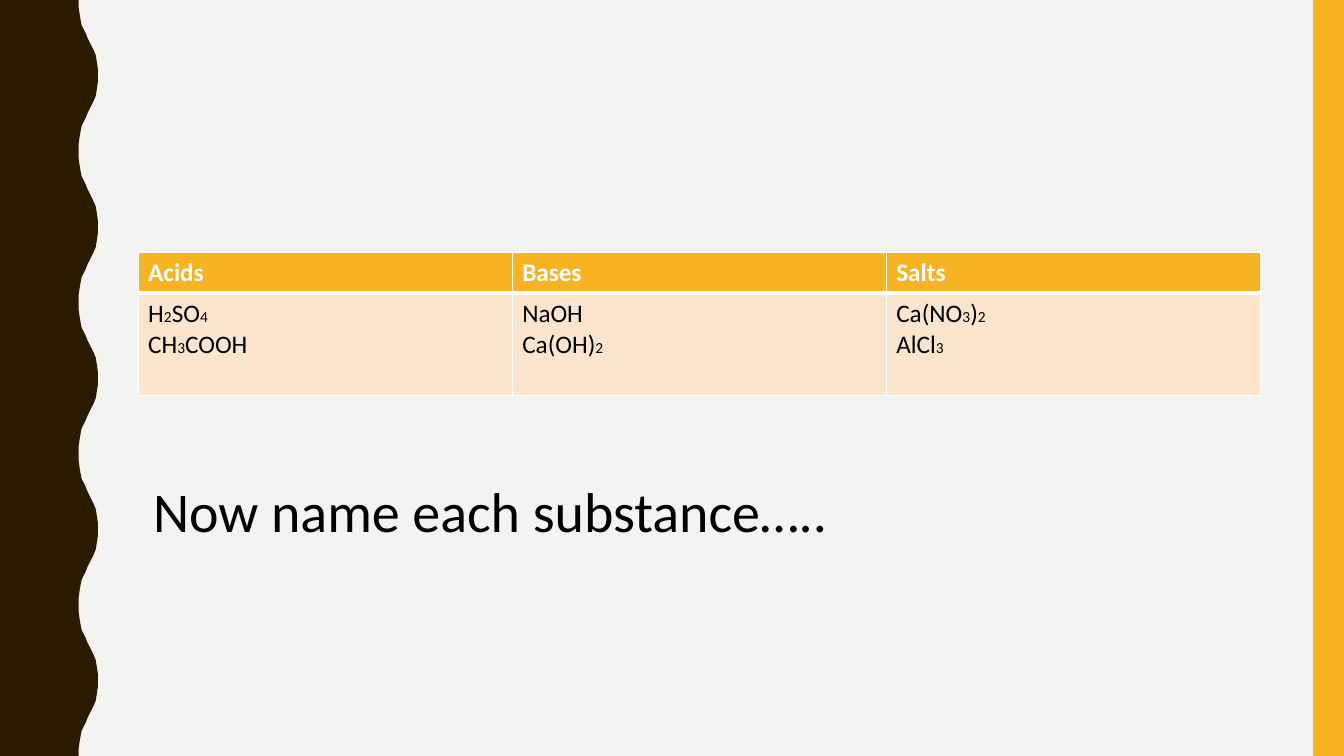
from itertools import groupby

from lxml.etree import SubElement
from pptx import Presentation
from pptx.dml.color import RGBColor
from pptx.enum.shapes import MSO_SHAPE
from pptx.enum.text import MSO_AUTO_SIZE
from pptx.oxml.ns import qn
from pptx.util import Emu, Pt

SCALE = 9144
SLIDE_WIDTH, SLIDE_HEIGHT = 1333, 750

BACKGROUND = RGBColor(0xF3, 0xF3, 0xF2)
BROWN = RGBColor(0x2A, 0x1A, 0x00)
AMBER = RGBColor(0xF8, 0xB3, 0x23)
PEACH = RGBColor(0xFC, 0xE5, 0xCD)
WHITE = RGBColor(0xFF, 0xFF, 0xFF)
BLACK = RGBColor(0x00, 0x00, 0x00)

HEADING = {"name": "Calibri", "size": Pt(18), "bold": True}
BODY = {"name": "Calibri", "size": Pt(18), "bold": False}
SUBSCRIPT = {"name": "Calibri", "size": Pt(11), "bold": False}
PROMPT = {"name": "Calibri", "size": Pt(40), "bold": False}

WAVE_PERIOD = 150
WAVE_RISE = [
    (78, 0), (78, 7), (79, 14), (80, 20), (81, 25), (83, 29), (85, 33), (87, 38),
    (89, 42), (91, 46), (93, 50), (95, 55), (96, 61), (97, 68), (97, 75),
]

SUBSTANCES = {
    "Acids": ["H2SO4", "CH3COOH"],
    "Bases": ["NaOH", "Ca(OH)2"],
    "Salts": ["Ca(NO3)2", "AlCl3"],
}
HEADER_HEIGHT = 41


def px(length):
    return Emu(length * SCALE)


def paint(shape, color):
    shape.shadow.inherit = False
    shape.fill.solid()
    shape.fill.fore_color.rgb = color
    shape.line.fill.background()


def add_run(paragraph, text, text_format, color):
    run = paragraph.add_run()
    run.text = text
    for name, value in text_format.items():
        setattr(run.font, name, value)
    run.font.color.rgb = color


def add_formula(paragraph, formula):
    for is_digit, characters in groupby(formula, str.isdigit):
        add_run(paragraph, "".join(characters), SUBSCRIPT if is_digit else BODY, BLACK)


def style_cell(cell, color, top_width, bottom_width):
    properties = cell._tc.get_or_add_tcPr()
    widths = {"a:lnL": 1, "a:lnR": 1, "a:lnT": top_width, "a:lnB": bottom_width}
    for tag, width in widths.items():
        border = SubElement(properties, qn(tag), w=str(Pt(width)))
        fill = SubElement(border, qn("a:solidFill"))
        SubElement(fill, qn("a:srgbClr"), val=str(WHITE))
    cell.fill.solid()
    cell.fill.fore_color.rgb = color


def add_wavy_band(slide, left, top, height):
    fall = [(x, WAVE_PERIOD - y) for x, y in reversed(WAVE_RISE[:-1])]
    edge = [
        (left + x, top + start + y)
        for start in range(0, height, WAVE_PERIOD)
        for x, y in WAVE_RISE + fall
    ]
    builder = slide.shapes.build_freeform(left, top, scale=SCALE)
    builder.add_line_segments(edge + [(left, top + height)], close=True)
    paint(builder.convert_to_shape(), BROWN)


def add_side_bar(slide, left, top, width, height):
    bar = slide.shapes.add_shape(
        MSO_SHAPE.RECTANGLE, px(left), px(top), px(width), px(height)
    )
    paint(bar, AMBER)


def add_substance_table(slide, left, top, width, height):
    table = slide.shapes.add_table(
        2, len(SUBSTANCES), px(left), px(top), px(width), px(height)
    ).table
    table.rows[0].height = px(HEADER_HEIGHT)
    table.rows[1].height = px(height - HEADER_HEIGHT)
    for column, (heading, formulas) in enumerate(SUBSTANCES.items()):
        header, body = table.cell(0, column), table.cell(1, column)
        style_cell(header, AMBER, 1, 3)
        style_cell(body, PEACH, 3, 1)
        add_run(header.text_frame.paragraphs[0], heading, HEADING, WHITE)
        for index, formula in enumerate(formulas):
            frame = body.text_frame
            paragraph = frame.add_paragraph() if index else frame.paragraphs[0]
            add_formula(paragraph, formula)


def add_prompt(slide, left, top, width, height):
    frame = slide.shapes.add_textbox(px(left), px(top), px(width), px(height)).text_frame
    frame.word_wrap = True
    frame.auto_size = MSO_AUTO_SIZE.SHAPE_TO_FIT_TEXT
    add_run(frame.paragraphs[0], "Now name each substance…..", PROMPT, BLACK)


def main():
    presentation = Presentation()
    presentation.slide_width = px(SLIDE_WIDTH)
    presentation.slide_height = px(SLIDE_HEIGHT)
    slide = presentation.slides.add_slide(presentation.slide_layouts[6])
    slide.background.fill.solid()
    slide.background.fill.fore_color.rgb = BACKGROUND
    add_wavy_band(slide, 0, 0, SLIDE_HEIGHT)
    add_side_bar(slide, 1302, 0, 31, SLIDE_HEIGHT)
    add_substance_table(slide, 137, 250, 1113, 142)
    add_prompt(slide, 142, 468, 813, 77)
    presentation.save("out.pptx")


if __name__ == "__main__":
    main()
